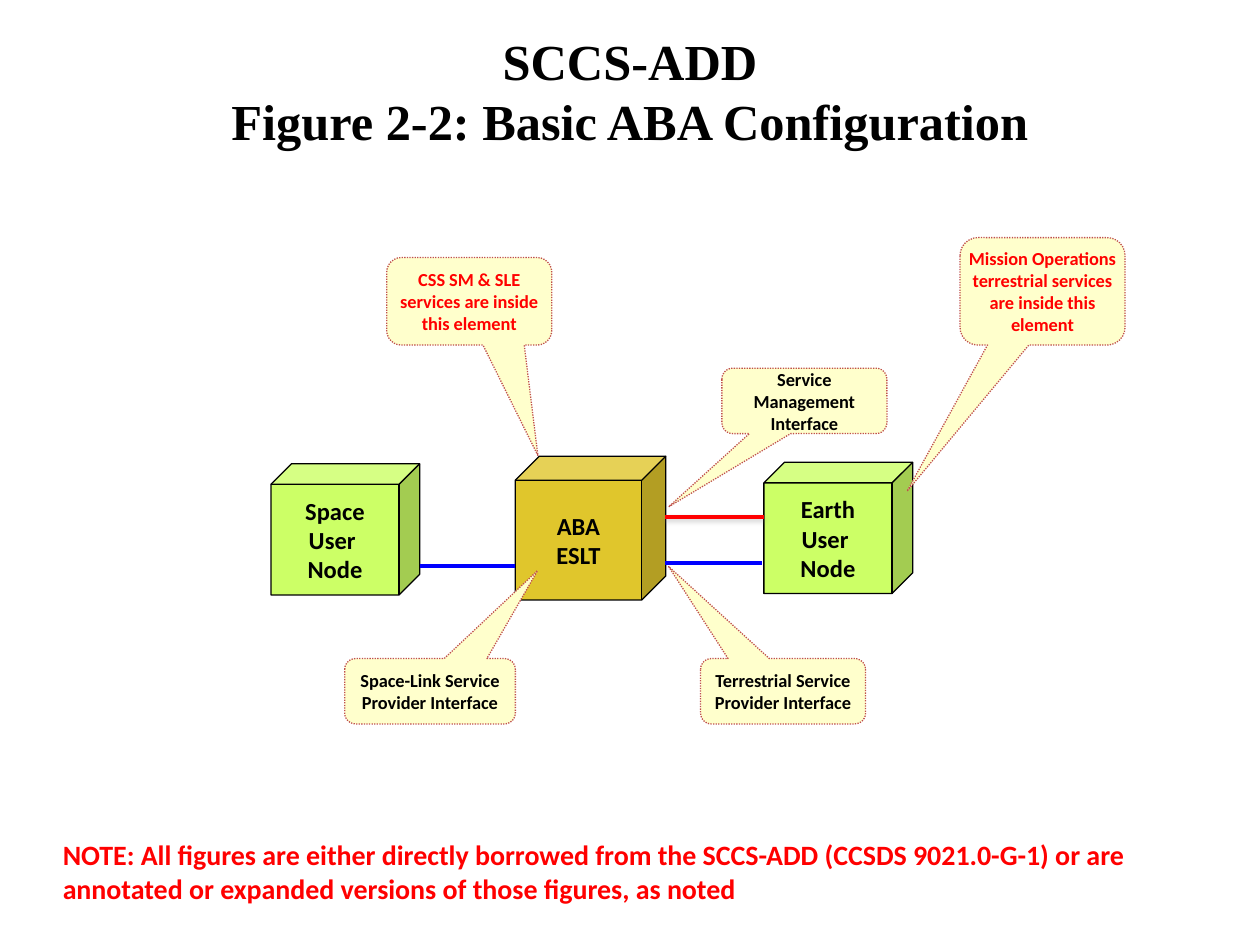
import pptx
import pptx.util
import pptx.dml.color
import pptx.enum.dml
import pptx.enum.shapes
import pptx.enum.text
import pptx.oxml
import pptx.oxml.ns

Pt = pptx.util.Pt
SHAPE = pptx.enum.shapes.MSO_SHAPE
ALIGN = pptx.enum.text.PP_ALIGN
ANCHOR = pptx.enum.text.MSO_ANCHOR
NS = pptx.oxml.ns.nsdecls("a")
SHADOW = (
    '<a:outerShdw blurRad="39370" dist="20320" dir="5400000" rotWithShape="0">'
    '<a:srgbClr val="808080"><a:alpha val="38000"/></a:srgbClr></a:outerShdw>'
)


def color(value):
    return pptx.dml.color.RGBColor.from_string(value)


class Diagram:
    font = "Calibri"
    black, red, blue = "000000", "FF0000", "0000FF"
    green, gold, cream, brick = "CCFF66", "E0C62C", "FFFFCC", "C0504D"

    def __init__(self, s):
        self.s = s

    def set_text(self, sp, text, size, fill, align, font=None):
        tf = sp.text_frame
        tf.text = text
        for p in tf.paragraphs:
            p.alignment = align
            for r in p.runs:
                r.font.name = font or self.font
                r.font.size = Pt(size)
                r.font.bold = True
                r.font.color.rgb = color(fill)
        return tf

    def title(self, text, x, y, w, h):
        sp = self.s.shapes.title
        sp.left, sp.top, sp.width, sp.height = Pt(x), Pt(y), Pt(w), Pt(h)
        tf = self.set_text(sp, text, 28.8, self.black, ALIGN.CENTER, "Times New Roman")
        tf.auto_size = pptx.enum.text.MSO_AUTO_SIZE.NONE
        tf.vertical_anchor = ANCHOR.MIDDLE
        tf.margin_top, tf.margin_bottom = 0, Pt(30)

    def shape(self, kind, x, y, w, h, fill, line, adjustments):
        sp = self.s.shapes.add_shape(kind, Pt(x), Pt(y), Pt(w), Pt(h))
        sp.shadow.inherit = False
        sp.fill.solid()
        sp.fill.fore_color.rgb = color(fill)
        sp.line.color.rgb = color(line)
        sp.line.width = Pt(0.75)
        for i, value in enumerate(adjustments):
            sp.adjustments[i] = value
        sp.text_frame.vertical_anchor = ANCHOR.MIDDLE
        return sp

    def node(self, text, x, y, w, h, fill, depth):
        sp = self.shape(SHAPE.CUBE, x, y, w, h, fill, self.black, [depth])
        self.set_text(sp, text, 14, self.black, ALIGN.CENTER).word_wrap = False

    def callout(self, text, x, y, w, h, tip_x, tip_y, fill):
        sp = self.shape(SHAPE.ROUNDED_RECTANGULAR_CALLOUT, x, y, w, h,
                        self.cream, self.brick, [tip_x, tip_y, 0.167])
        sp.line.dash_style = pptx.enum.dml.MSO_LINE.ROUND_DOT
        tf = self.set_text(sp, text, 10.5, fill, ALIGN.CENTER)
        tf.word_wrap = True
        tf.margin_left = tf.margin_right = tf.margin_top = tf.margin_bottom = 0

    def link(self, x1, x2, y, fill, effect=""):
        c = self.s.shapes.add_connector(
            pptx.enum.shapes.MSO_CONNECTOR.STRAIGHT, Pt(x1), Pt(y), Pt(x2), Pt(y))
        c.line.color.rgb = color(fill)
        c.line.width = Pt(2.25)
        c._element.spPr.append(pptx.oxml.parse_xml(
            f"<a:effectLst {NS}>{effect}</a:effectLst>"))

    def note(self, text, x, y, w, h):
        sp = self.s.shapes.add_textbox(Pt(x), Pt(y), Pt(w), Pt(h))
        tf = self.set_text(sp, text, 16, self.red, ALIGN.LEFT)
        tf.word_wrap = True
        tf.auto_size = pptx.enum.text.MSO_AUTO_SIZE.SHAPE_TO_FIT_TEXT


def main():
    prs = pptx.Presentation()
    prs.slide_width, prs.slide_height = Pt(720), Pt(540)
    d = Diagram(prs.slides.add_slide(prs.slide_layouts[5]))

    d.title("SCCS-ADD\vFigure 2-2: Basic ABA Configuration", 36, 21.6, 648, 90)

    d.node("Space\vUser \nNode", 154.8, 265, 85, 75, d.green, 0.157)
    d.node("ABA\nESLT", 294.5, 260.7, 86, 82.2, d.gold, 0.167)
    d.link(380.2, 435.6, 321.6, d.blue)
    d.node("Earth\vUser \nNode", 436.5, 264.2, 85, 75, d.green, 0.157)
    d.link(239.8, 294.5, 323.5, d.blue)

    d.callout("Terrestrial Service Provider Interface",
              400.3, 376.3, 94.3, 37.4, -0.693, -1.906, d.black)
    d.callout("Space-Link Service Provider Interface",
              197, 376.3, 97.5, 37.4, 0.63, -1.844, d.black)
    d.callout("Service\nManagement\nInterface",
              412.5, 210.4, 94.3, 37.4, -0.822, 1.618, d.black)
    d.link(436.5, 380.2, 295.3, d.red, SHADOW)
    d.callout("Mission Operations terrestrial services are inside this element",
              548.6, 135.8, 94.3, 61.4, -0.821, 1.86, d.red)
    d.callout("CSS SM & SLE services are inside this element",
              221, 147.2, 94.3, 50, 0.416, 1.762, d.red)

    d.note("NOTE: All figures are either directly borrowed from the SCCS-ADD "
           "(CCSDS 9021.0-G-1) or are annotated or expanded versions of those "
           "figures, as noted", 28.8, 475.2, 635.8, 46)

    prs.save("out.pptx")


if __name__ == "__main__":
    main()
